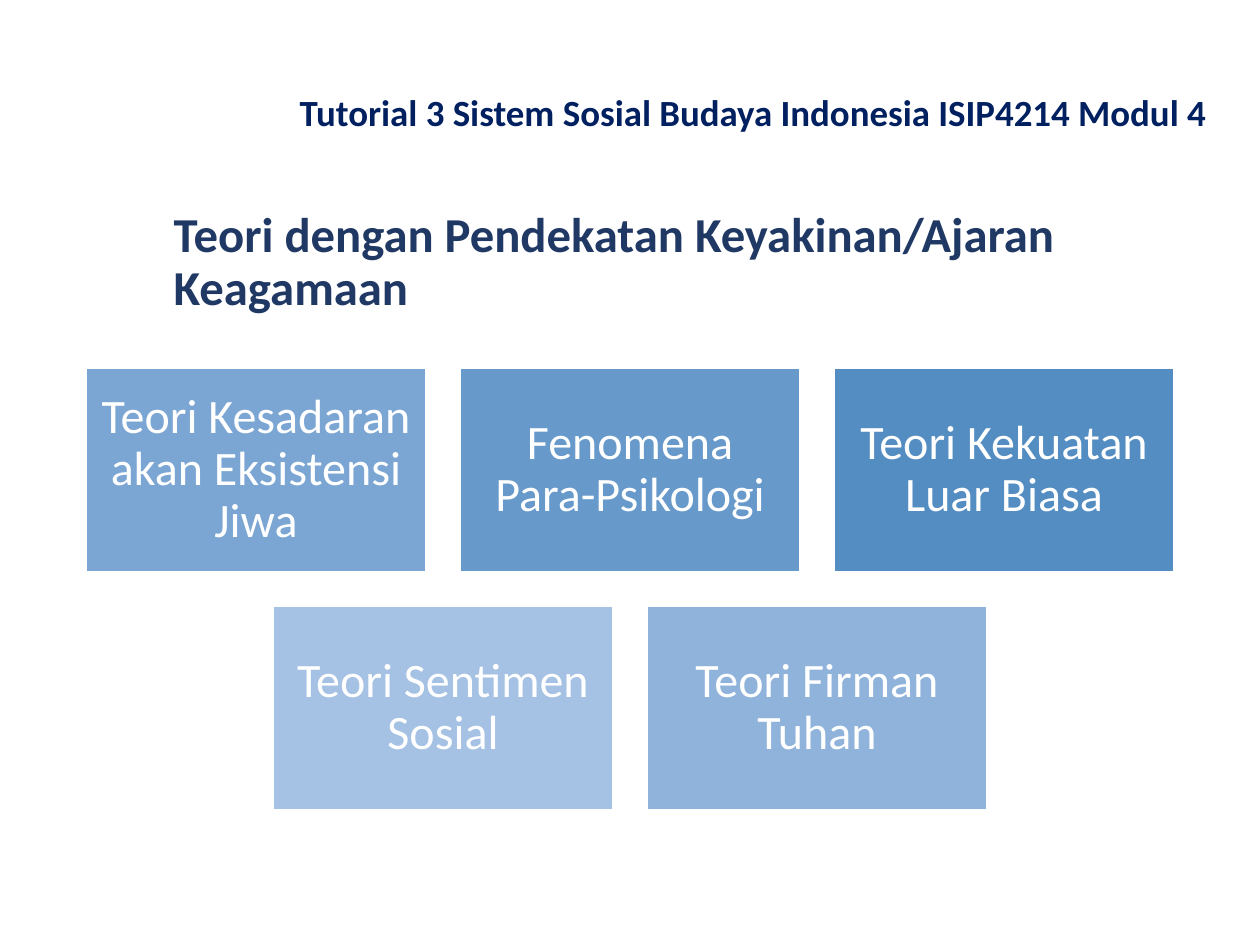
from pptx import Presentation
from pptx.dml.color import RGBColor as RGB
from pptx.enum.shapes import MSO_SHAPE as SHAPE
from pptx.enum.text import MSO_ANCHOR as ANCHOR, PP_ALIGN as ALIGN
from pptx.util import Emu, Pt

EMU_PER_PX = 10320
SLIDE_W, SLIDE_H = 1260, 945
FONT = "Calibri"

COLORS = {
    "white": "FFFFFF",
    "navy": "002060",
    "title": "203864",
    "sentimen": "A5C1E3",
    "firman": "90B3DB",
    "kesadaran": "7BA6D3",
    "fenomena": "6799CA",
    "kekuatan": "538DC1",
}

# Theory boxes, row by row
BOX_W, BOX_H, GAP = 340, 204, 34
ROWS_TOP = 368
BOX_INSET = 14
THEORY_ROWS = [
    [("Teori Kesadaran akan Eksistensi Jiwa", "kesadaran"),
     ("Fenomena Para-Psikologi", "fenomena"),
     ("Teori Kekuatan Luar Biasa", "kekuatan")],
    [("Teori Sentimen Sosial", "sentimen"),
     ("Teori Firman Tuhan", "firman")],
]


def px(n):
    return Emu(round(n * EMU_PER_PX))


def rgb(name):
    return RGB.from_string(COLORS[name])


def write_text(sp, text, size, color, bold=False, align=ALIGN.LEFT):
    tf = sp.text_frame
    tf.word_wrap = True
    tf.vertical_anchor = ANCHOR.MIDDLE
    p = tf.paragraphs[0]
    p.alignment = align
    p.line_spacing = 0.9
    r = p.add_run()
    r.text = text
    r.font.name = FONT
    r.font.size = Pt(size)
    r.font.bold = bold
    r.font.color.rgb = rgb(color)


def add_heading(s, x, y, w, h, text, size, color):
    sp = s.shapes.add_textbox(px(x), px(y), px(w), px(h))
    write_text(sp, text, size, color, bold=True)


def add_theory_box(s, x, y, text, fill):
    sp = s.shapes.add_shape(SHAPE.RECTANGLE, px(x), px(y), px(BOX_W), px(BOX_H))
    sp.shadow.inherit = False
    sp.fill.solid()
    sp.fill.fore_color.rgb = rgb(fill)
    sp.line.color.rgb = rgb("white")
    sp.line.width = Pt(1)
    tf = sp.text_frame
    tf.margin_left = tf.margin_right = px(BOX_INSET)
    tf.margin_top = tf.margin_bottom = px(BOX_INSET)
    write_text(sp, text, 39, "white", align=ALIGN.CENTER)


def add_theory_rows(s):
    for i, row in enumerate(THEORY_ROWS):
        # Each row is centred on the slide
        row_w = len(row) * (BOX_W + GAP) - GAP
        left = (SLIDE_W - row_w) // 2
        top = ROWS_TOP + i * (BOX_H + GAP)
        for j, (text, fill) in enumerate(row):
            add_theory_box(s, left + j * (BOX_W + GAP), top, text, fill)


def main():
    prs = Presentation()
    prs.slide_width, prs.slide_height = px(SLIDE_W), px(SLIDE_H)
    s = prs.slides.add_slide(prs.slide_layouts[6])

    # Course header and slide title
    add_heading(s, 291, 59, 969, 111,
                "Tutorial 3 Sistem Sosial Budaya Indonesia ISIP4214 Modul 4",
                30, "navy")
    add_heading(s, 165, 202, 957, 122,
                "Teori dengan Pendekatan Keyakinan/Ajaran Keagamaan",
                39.6, "title")

    add_theory_rows(s)
    prs.save("out.pptx")


if __name__ == "__main__":
    main()
